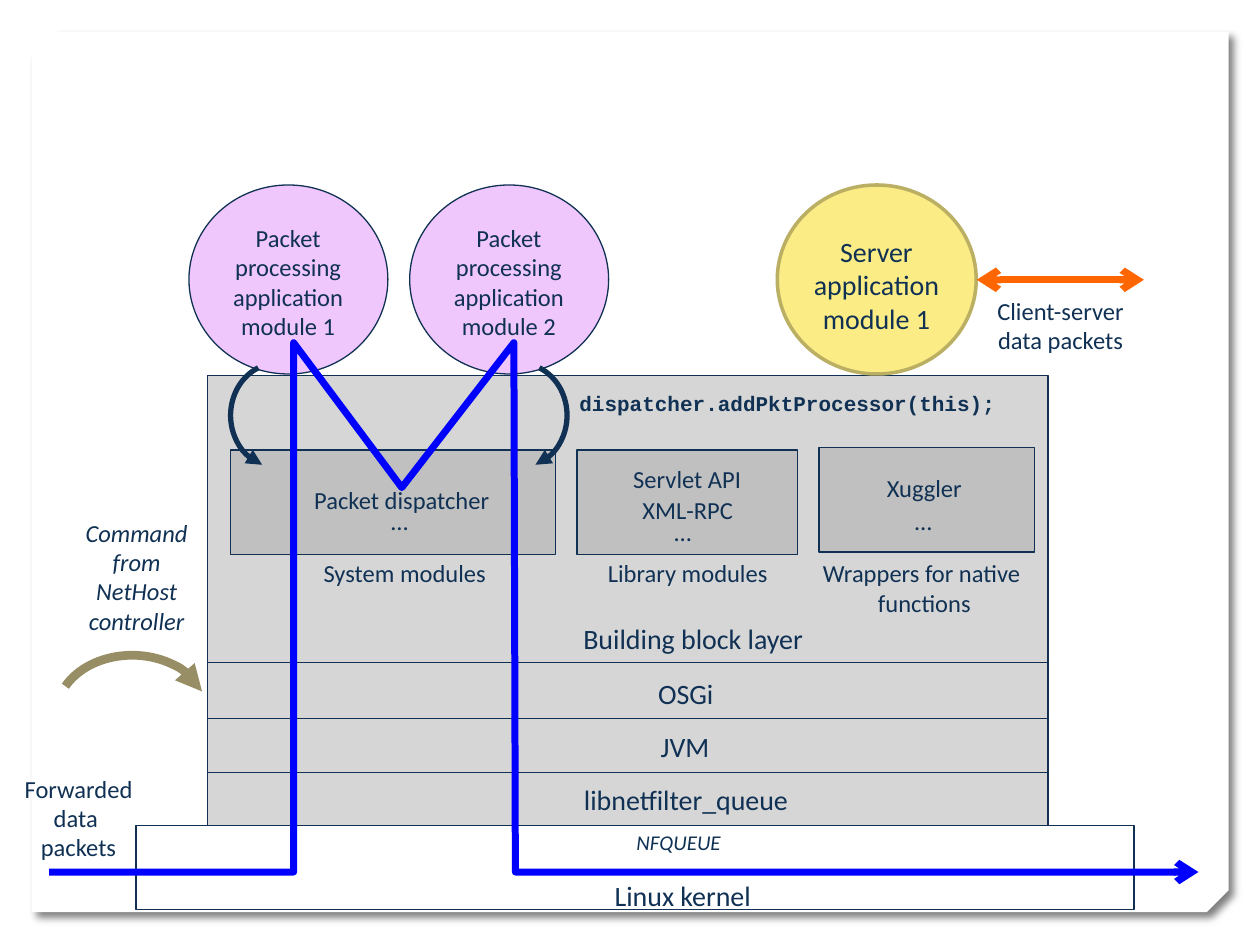
from lxml import etree
from pptx import Presentation
from pptx.dml.color import RGBColor
from pptx.enum import shapes, text
from pptx.oxml import parse_xml
from pptx.oxml.ns import nsdecls, qn
from pptx.util import Cm, Pt

NAVY = RGBColor(0x10, 0x31, 0x54)
WHITE = RGBColor(0xFF, 0xFF, 0xFF)
PALE = RGBColor(0xD6, 0xD6, 0xD6)
GREY = RGBColor(0xC0, 0xC0, 0xC0)
PINK = RGBColor(0xEF, 0xC7, 0xFD)
YELLOW = RGBColor(0xFB, 0xEC, 0x85)
OLIVE = RGBColor(0xBA, 0xAF, 0x62)
KHAKI = RGBColor(0x98, 0x8E, 0x65)
ORANGE = RGBColor(0xFF, 0x66, 0x00)
BLUE = RGBColor(0x00, 0x00, 0xFF)

KIND = shapes.MSO_SHAPE
LEFT, CENTER = text.PP_ALIGN.LEFT, text.PP_ALIGN.CENTER

STACK_X, STACK_W = 4.19, 16.94
LAYERS = [(7.57, 5.79), (13.36, 1.12), (14.48, 1.1), (15.57, 1.07)]
GROUPS = [(4.65, 9.07, 6.55, 2.11), (11.63, 9.07, 4.45, 2.11),
          (16.51, 9.02, 4.34, 2.11)]
ROUTE = [(0.99, 17.58), (5.92, 17.58), (5.92, 6.91), (8.1, 9.83),
         (10.36, 6.91), (10.39, 17.58), (24.16, 17.58)]

# left, top, width, size, paragraphs
LABELS = [
    (10.59, 17.58, 6.35, 16, ["Linux kernel"]),
    (10.8, 12.4, 6.35, 16, ["Building block layer"]),
    (5.72, 11.13, 4.88, 14, ["System modules"]),
    (11.86, 11.13, 4.01, 14, ["Library modules"]),
    (16.31, 11.13, 4.65, 14, ["Wrappers for native ", "functions"]),
    (19.69, 5.84, 3.38, 14, ["Client-server data packets"]),
    (0.1, 15.47, 2.97, 14, ["Forwarded data ", "packets"]),
    (5.72, 9.65, 4.65, 14, [" Packet dispatcher"]),
    (7.42, 10.08, 1.27, 14, ["…"]),
    (11.63, 9.22, 4.45, 14, ["Servlet API"]),
    (11.86, 9.86, 4.01, 14, ["XML-RPC"]),
    (13.13, 10.29, 1.27, 14, ["…"]),
    (16.31, 9.42, 4.65, 14, ["Xuggler"]),
    (17.98, 10.08, 1.27, 14, ["…"]),
]
LAYER_NAMES = [
    (13.0, 13.51, 1.65, 16, ["OSGi"]),
    (13.06, 14.58, 1.5, 16, ["JVM"]),
    (11.48, 15.65, 4.7, 16, ["libnetfilter_queue"]),
]


def style(shape, fill=None, line=None, width=0.75):
    shape.shadow.inherit = False
    if fill is None:
        shape.fill.background()
    else:
        shape.fill.solid()
        shape.fill.fore_color.rgb = fill
    if line is None:
        shape.line.fill.background()
    else:
        shape.line.color.rgb = line
        shape.line.width = Pt(width)


def add_box(slide, kind, box, fill=None, line=NAVY, width=0.75):
    shape = slide.shapes.add_shape(kind, *map(Cm, box))
    style(shape, fill, line, width)
    return shape


def add_text(slide, x, y, w, size, lines, align=CENTER, wrap=True,
             font="Calibri", bold=False, italic=False):
    """Add a text box whose height follows its lines."""
    high = 0.51 + len(lines) * size * 0.043
    frame = slide.shapes.add_textbox(Cm(x), Cm(y), Cm(w), Cm(high)).text_frame
    frame.word_wrap = wrap
    frame.auto_size = text.MSO_AUTO_SIZE.SHAPE_TO_FIT_TEXT
    for i, words in enumerate(lines):
        para = frame.paragraphs[0] if i == 0 else frame.add_paragraph()
        para.alignment = align
        run = para.add_run()
        run.text = words
        run.font.name, run.font.size = font, Pt(size)
        run.font.bold, run.font.italic = bold, italic
        run.font.color.rgb = NAVY


def add_head(shape, head, ends=("tailEnd",)):
    ln = shape.line._get_or_add_ln()
    for end in ends:
        etree.SubElement(ln, qn("a:" + end)).set("type", head)


def flip(shape, axis):
    shape._element.spPr.find(qn("a:xfrm")).set(axis, "1")


def add_page(slide):
    """Add the white sheet with snipped corner and soft shadow."""
    page = add_box(slide, KIND.SNIP_2_DIAG_RECTANGLE,
                   (0.64, 0.64, 24.13, 17.75), WHITE, None)
    page.adjustments[0], page.adjustments[1] = 0, 0.025
    flip(page, "flipV")
    page._element.spPr.find(qn("a:effectLst")).append(parse_xml(
        f'<a:outerShdw {nsdecls("a")} blurRad="{Pt(4)}" dist="{Pt(5)}" '
        'dir="2700000" algn="tl" rotWithShape="0"><a:srgbClr val="000000">'
        '<a:alpha val="50000"/></a:srgbClr></a:outerShdw>'))


def add_module(slide, x, lines, size, drop, fill, line=NAVY, width=0.75):
    """Add a round module with its name, drop below the circle's top."""
    top = 3.73
    add_box(slide, KIND.OVAL, (x, top, 4.01, 3.81), fill, line, width)
    add_text(slide, x + 0.2, top + drop, 3.6, size, lines)


def add_arc(slide, box, color, width, turn=0):
    arc = add_box(slide, KIND.ARC, box, None, color, width)
    arc.adjustments[0], arc.adjustments[1] = 121.464, 205.367
    arc.rotation = turn
    add_head(arc, "triangle")
    return arc


def add_route(slide):
    points = [(Cm(x), Cm(y)) for x, y in ROUTE]
    pen = slide.shapes.build_freeform(*points[0])
    pen.add_line_segments(points[1:], close=False)
    route = pen.convert_to_shape()
    style(route, None, BLUE, 4)
    add_head(route, "arrow")


def add_link(slide, x1, y1, x2, y2):
    link = slide.shapes.add_connector(shapes.MSO_CONNECTOR.STRAIGHT,
                                      *map(Cm, (x1, y1, x2, y2)))
    link.line.color.rgb = ORANGE
    link.line.width = Pt(4)
    add_head(link, "arrow", ("headEnd", "tailEnd"))
    etree.SubElement(link._element.spPr, qn("a:effectLst"))


def main():
    deck = Presentation()
    deck.slide_width, deck.slide_height = Cm(25.4), Cm(19.05)
    slide = deck.slides.add_slide(deck.slide_layouts[6])

    add_page(slide)
    for top, high in LAYERS:
        add_box(slide, KIND.RECTANGLE, (STACK_X, top, STACK_W, high), PALE)
    add_box(slide, KIND.RECTANGLE, (2.74, 16.64, 20.12, 1.7))
    for box in GROUPS:
        add_box(slide, KIND.RECTANGLE, box, GREY)

    for num, x in enumerate((3.81, 8.26), 1):
        add_module(slide, x, ["Packet processing", f"application module {num}"],
                   14, 0.64, PINK)
    add_module(slide, 15.67, ["Server", "application", "module 1"],
               16, 0.87, YELLOW, OLIVE, 2)

    add_link(slide, 19.69, 5.64, 23.06, 5.64)
    add_route(slide)
    add_arc(slide, (1.14, 13.21, 3.05, 2.36), KHAKI, 5)
    flip(add_arc(slide, (4.55, 7.42, 2.11, 1.91), NAVY, 3, 270), "flipH")
    add_arc(slide, (9.42, 7.42, 2.11, 1.91), NAVY, 3, 90)

    for label in LABELS:
        add_text(slide, *label)
    for label in LAYER_NAMES:
        add_text(slide, *label, wrap=False)
    add_text(slide, 12.32, 16.59, 2.72, 12, ["NFQUEUE"], wrap=False,
             italic=True)
    add_text(slide, 1.27, 10.31, 2.97, 14,
             ["Command from NetHost controller"], italic=True)
    add_text(slide, 11.43, 7.75, 9.32, 12,
             ["dispatcher.addPktProcessor(this);"], align=LEFT,
             font="Courier New", bold=True)
    deck.save("out.pptx")


if __name__ == "__main__":
    main()
